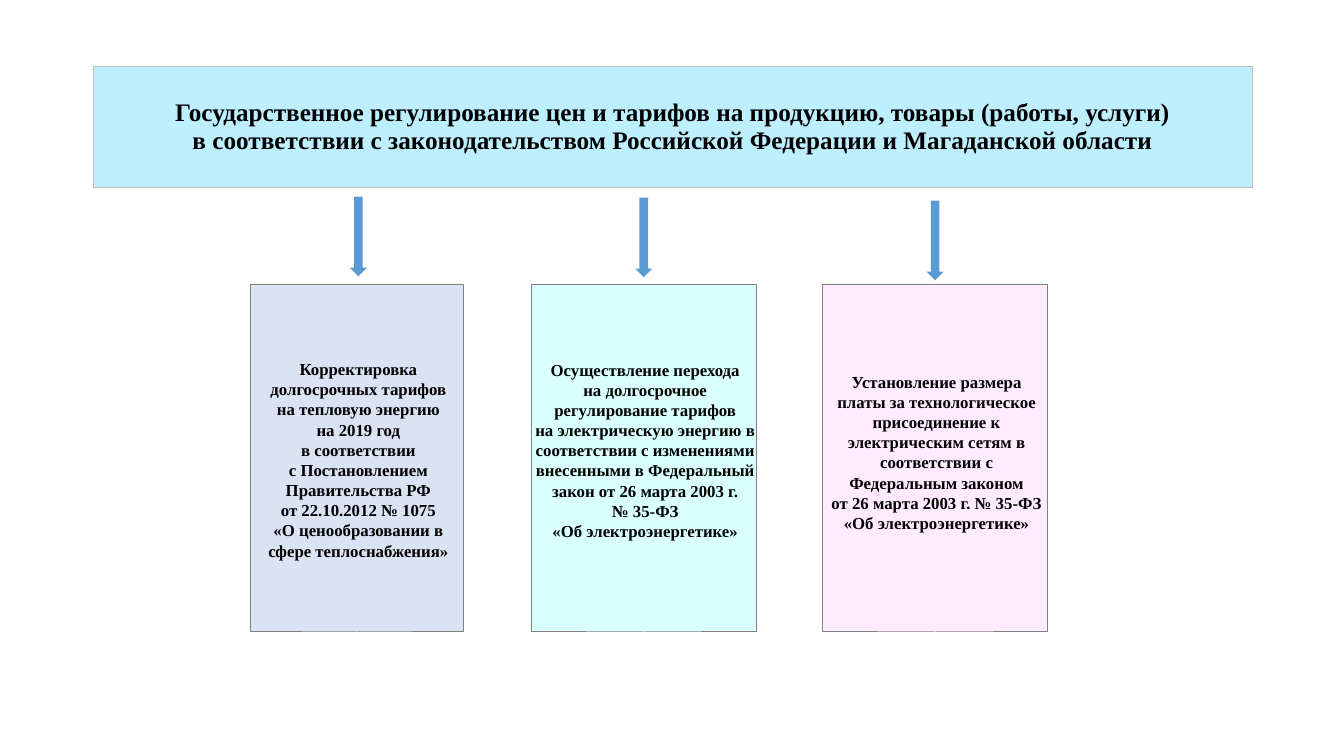
from lxml import etree
from pptx import Presentation
from pptx.dml.color import RGBColor
from pptx.enum import shapes, text
from pptx.oxml import ns
from pptx.util import Inches, Pt

BLACK = RGBColor(0x00, 0x00, 0x00)
GREY = RGBColor(0x80, 0x80, 0x80)
BORDER = RGBColor(0xBF, 0xBF, 0xBF)
ARROW = RGBColor(0x5B, 0x9B, 0xD5)
SKY = RGBColor(0xBD, 0xEF, 0xFF)
LAVENDER = RGBColor(0xDA, 0xE3, 0xF3)
MINT = RGBColor(0xD9, 0xFF, 0xFF)
PINK = RGBColor(0xFF, 0xEB, 0xFF)

TITLE = ("Государственное регулирование цен и тарифов на продукцию, товары (работы, услуги)\v"
         "в соответствии с законодательством Российской Федерации и Магаданской области")

# box left, box width, arrow left, arrow top, bottom inset, fill, paragraphs
MEASURES = [
    (2.48, 2.12, 3.47, 1.95, 0, LAVENDER, [
        "Корректировка долгосрочных тарифов",
        "на тепловую энергию",
        "на 2019 год",
        "в соответствии",
        "с Постановлением Правительства РФ",
        "от 22.10.2012 № 1075",
        "«О ценообразовании в сфере теплоснабжения»",
    ]),
    (5.27, 2.23, 6.3, 1.96, 0.19, MINT, [
        "Осуществление перехода",
        "на долгосрочное регулирование тарифов",
        "на электрическую энергию в соответствии с изменениями внесенными в "
        "Федеральный закон от 26 марта 2003 г.",
        "№ 35-ФЗ",
        "«Об электроэнергетике»",
    ]),
    (8.16, 2.23, 9.19, 1.99, 0.15, PINK, [
        "Установление размера платы за технологическое присоединение к "
        "электрическим сетям в соответствии с",
        "Федеральным законом",
        "от 26 марта 2003 г. № 35-ФЗ",
        "«Об электроэнергетике»",
    ]),
]


class Diagram:
    font = "Times New Roman"

    def __init__(self, slide):
        self.s = slide

    def add_lines(self, tf, lines, size):
        tf.word_wrap = True
        for i, line in enumerate(lines):
            p = tf.paragraphs[0] if i == 0 else tf.add_paragraph()
            p.text = line
            p.alignment = text.PP_ALIGN.CENTER
            p.font.name, p.font.size, p.font.bold = self.font, Pt(size), True
            p.font.color.rgb = BLACK

    def shape(self, kind, left, top, width, height, fill):
        sp = self.s.shapes.add_shape(kind, Inches(left), Inches(top),
                                     Inches(width), Inches(height))
        sp.shadow.inherit = False
        sp.fill.solid()
        sp.fill.fore_color.rgb = fill
        return sp

    def arrow(self, left, top):
        sp = self.shape(shapes.MSO_SHAPE.DOWN_ARROW, left, top, 0.17, 0.79, ARROW)
        sp.line.fill.background()

    def box(self, left, width, bottom_inset, fill, lines):
        sp = self.shape(shapes.MSO_SHAPE.RECTANGLE, left, 2.82, width, 3.45, fill)
        sp.line.color.rgb = GREY
        sp.line.width = Pt(0.75)
        tf = sp.text_frame
        tf.vertical_anchor = text.MSO_ANCHOR.MIDDLE
        tf.margin_left = tf.margin_top = Inches(0.03)
        tf.margin_right = 0
        tf.margin_bottom = Inches(bottom_inset)
        self.add_lines(tf, lines, 12)

    def banner(self, left, top, width, height, fill, line):
        """Add a one-cell table with thin borders."""
        frame = self.s.shapes.add_table(1, 1, Inches(left), Inches(top),
                                        Inches(width), Inches(height))
        cell = frame.table.cell(0, 0)
        cell.vertical_anchor = text.MSO_ANCHOR.MIDDLE
        self.add_lines(cell.text_frame, [line], 18)
        tc_pr = cell._tc.get_or_add_tcPr()
        for side in ("a:lnL", "a:lnR", "a:lnT", "a:lnB"):
            ln = etree.SubElement(tc_pr, ns.qn(side), w=str(int(Pt(0.25))))
            solid = etree.SubElement(ln, ns.qn("a:solidFill"))
            etree.SubElement(solid, ns.qn("a:srgbClr"), val=str(BORDER))
        cell.fill.solid()
        cell.fill.fore_color.rgb = fill


def main():
    prs = Presentation()
    prs.slide_width, prs.slide_height = Inches(13.33), Inches(7.5)
    diagram = Diagram(prs.slides.add_slide(prs.slide_layouts[6]))
    for left, width, arrow_left, arrow_top, inset, fill, lines in MEASURES:
        diagram.arrow(arrow_left, arrow_top)
        diagram.box(left, width, inset, fill, lines)
    diagram.banner(0.92, 0.66, 11.5, 1.2, SKY, TITLE)
    prs.save("out.pptx")


if __name__ == "__main__":
    main()
